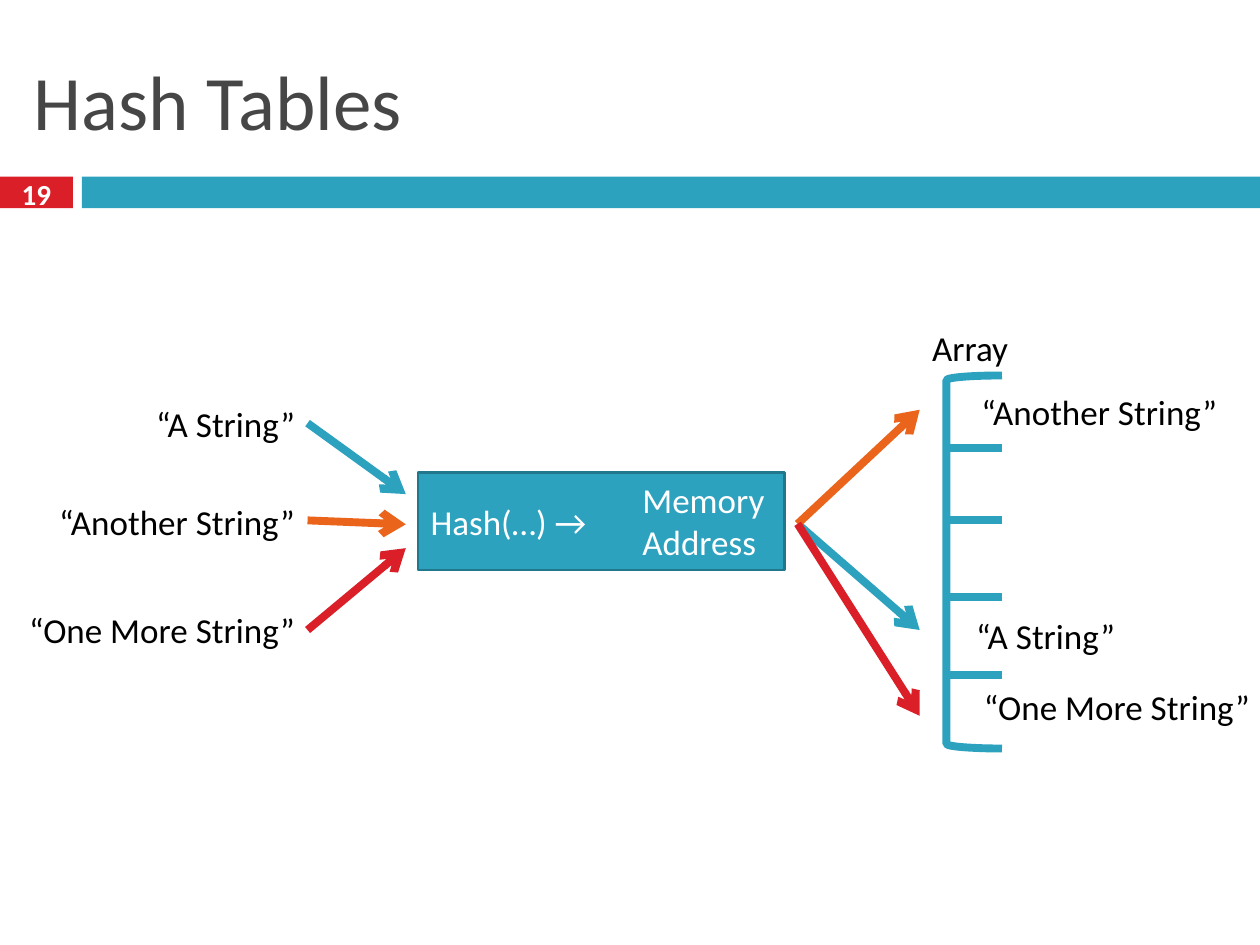
from lxml import etree
from pptx import Presentation
from pptx import util as u
from pptx.dml.color import RGBColor
from pptx.enum import shapes, text
from pptx.oxml import ns

TEAL = RGBColor(0x2D, 0xA2, 0xBF)
DARK_TEAL = RGBColor(0x21, 0x78, 0x8D)
ORANGE = RGBColor(0xEB, 0x64, 0x1B)
RED = RGBColor(0xDA, 0x1F, 0x28)
GREY = RGBColor(0x46, 0x46, 0x46)
WHITE = RGBColor(0xFF, 0xFF, 0xFF)
BLACK = RGBColor(0, 0, 0)

LEFT, CENTER, RIGHT = text.PP_ALIGN.LEFT, text.PP_ALIGN.CENTER, text.PP_ALIGN.RIGHT
THICK = 4.5
LINE_HEIGHT = 1.12

TITLE = "Hash Tables"
PAGE_NUMBER = "19"
BARS = [(0, 1.47, RED), (1.65, 23.75, TEAL)]
BAR_TOP, BAR_HEIGHT = 3.56, 0.64

HASH_BOX = (8.43, 9.53, 7.39, 1.96)
HASH_LABELS = [
    (["Hash(…) →"], (8.43, 9.96, 4.27, LINE_HEIGHT)),
    (["Memory", "Address"], (12.7, 9.53, 3.12, 1.96)),
]

KEYS_RIGHT, STORED_LEFT = 6.2, 19.25
INPUT_END, OUTPUT_START, OUTPUT_END = 8.18, (16.08, 10.56), 18.54
ENTRIES = [
    {"key": "“A String”", "width": 3.48, "color": TEAL, "key_top": 7.98,
     "input_y": (8.53, 9.96), "output_y": 12.7, "stored_top": 12.27},
    {"key": "“Another String”", "width": 5.54, "color": ORANGE, "key_top": 9.96,
     "input_y": (10.49, 10.57), "output_y": 8.26, "stored_top": 7.75},
    {"key": "“One More String”", "width": 6.2, "color": RED, "key_top": 12.14,
     "input_y": (12.7, 11.05), "output_y": 14.43, "stored_top": 13.69},
]

ARRAY_LABEL = (18.54, 6.45, 2.21, LINE_HEIGHT)
ARRAY = (19.08, 7.57, 1.12, 7.52)
DIVIDERS = [9.04, 10.49, 12.04, 13.61]


def lengths(values):
    return [u.Cm(value) for value in values]


def write(frame, lines, color, size=20, bold=False, align=LEFT):
    font_format = {"name": "Calibri", "size": u.Pt(size), "bold": bold}
    for index, line in enumerate(lines):
        para = frame.add_paragraph() if index else frame.paragraphs[0]
        para.alignment = align
        span = para.add_run()
        span.text = line
        for name, value in font_format.items():
            setattr(span.font, name, value)
        span.font.color.rgb = color


def add_label(page, lines, place, color=BLACK, align=LEFT):
    frame = page.shapes.add_textbox(*lengths(place)).text_frame
    frame.word_wrap = False
    frame.auto_size = text.MSO_AUTO_SIZE.SHAPE_TO_FIT_TEXT
    write(frame, lines, color, align=align)


def add_preset(page, preset, place, fill=None, line=None, width=THICK):
    shape = page.shapes.add_shape(preset, *lengths(place))
    shape.shadow.inherit = False
    for part, color in ((shape.fill, fill), (shape.line.fill, line)):
        if color is None:
            part.background()
        else:
            part.solid()
            part.fore_color.rgb = color
    if line is not None:
        shape.line.width = u.Pt(width)


def add_line(page, start, end, color, arrow=False):
    line = page.shapes.add_connector(
        shapes.MSO_CONNECTOR.STRAIGHT, *lengths((*start, *end)))
    line.line.color.rgb = color
    line.line.width = u.Pt(THICK)
    properties = line._element.spPr
    if arrow:
        outline = properties.find(ns.qn("a:ln"))
        etree.SubElement(outline, ns.qn("a:tailEnd"), type="arrow")
    etree.SubElement(properties, ns.qn("a:effectLst"))


def add_heading(page):
    title = page.shapes.title
    place = {"left": 0.43, "top": 0.64, "width": 24.56, "height": 2.74}
    for name, value in place.items():
        setattr(title, name, u.Cm(value))
    number = page.shapes.add_textbox(*lengths((0, 3.48, 1.47, 0.84)))
    for left, width, color in BARS:
        add_preset(page, shapes.MSO_SHAPE.RECTANGLE,
                   (left, BAR_TOP, width, BAR_HEIGHT), color)
    page.shapes._spTree.append(number._element)
    frame_format = {"word_wrap": True, "auto_size": text.MSO_AUTO_SIZE.NONE,
                    "vertical_anchor": text.MSO_ANCHOR.MIDDLE}
    for box in (title, number):
        for name, value in frame_format.items():
            setattr(box.text_frame, name, value)
    write(title.text_frame, [TITLE], GREY, 44)
    write(number.text_frame, [PAGE_NUMBER], WHITE, 16.6, True, CENTER)


def add_hash_box(page):
    add_preset(page, shapes.MSO_SHAPE.RECTANGLE, HASH_BOX, TEAL, DARK_TEAL, 1.5)
    for lines, place in HASH_LABELS:
        add_label(page, lines, place, WHITE)


def add_array(page):
    left, _, width, _ = ARRAY
    add_preset(page, shapes.MSO_SHAPE.LEFT_BRACKET, ARRAY, line=TEAL)
    for y in DIVIDERS:
        add_line(page, (left, y), (left + width, y), TEAL)
    add_label(page, ["Array"], ARRAY_LABEL)


def add_entry(page, entry):
    start_y, end_y = entry["input_y"]
    width = entry["width"]
    add_line(page, (KEYS_RIGHT, start_y), (INPUT_END, end_y), entry["color"], True)
    add_line(page, OUTPUT_START, (OUTPUT_END, entry["output_y"]), entry["color"], True)
    for left, top in ((KEYS_RIGHT - width, entry["key_top"]),
                      (STORED_LEFT, entry["stored_top"])):
        add_label(page, [entry["key"]], (left, top, width, LINE_HEIGHT), align=RIGHT)


def main():
    deck = Presentation()
    deck.slide_width, deck.slide_height = lengths((25.4, 19.05))
    page = deck.slides.add_slide(deck.slide_layouts[5])
    add_heading(page)
    add_hash_box(page)
    add_array(page)
    for entry in ENTRIES:
        add_entry(page, entry)
    deck.save("out.pptx")


if __name__ == "__main__":
    main()
